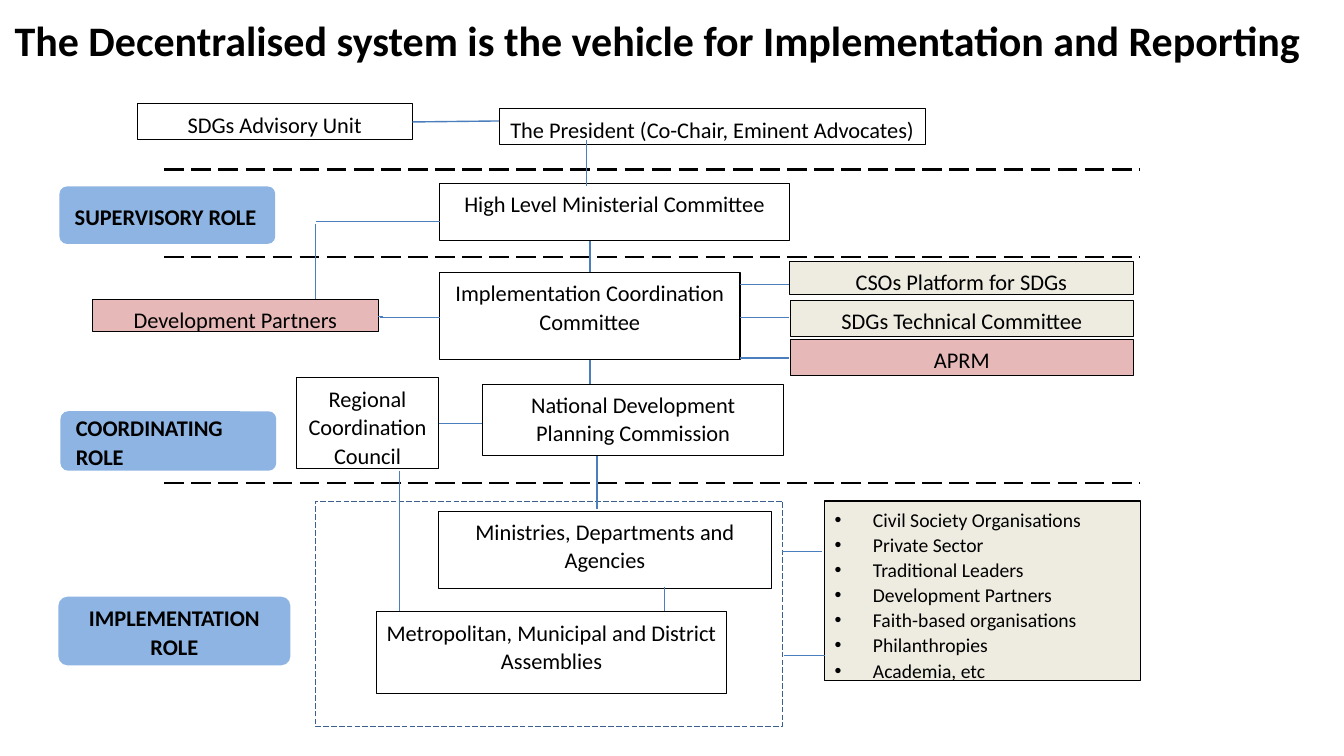
from lxml.etree import SubElement
from pptx import Presentation
from pptx.dml.color import RGBColor
from pptx.enum.dml import MSO_LINE
from pptx.enum.shapes import MSO_CONNECTOR, MSO_SHAPE
from pptx.enum.text import MSO_ANCHOR, PP_ALIGN
from pptx.oxml.ns import qn
from pptx.util import Inches, Pt

BLACK, WHITE, CREAM, PINK = "000000", "FFFFFF", "EEECE1", "E6B9B8"
ROLE_BLUE, LINK_BLUE, FRAME_BLUE = "8EB4E3", "4B7EBC", "3A5F8C"
CENTER, LEFT = PP_ALIGN.CENTER, PP_ALIGN.LEFT

prs = Presentation()
prs.slide_width, prs.slide_height = Inches(13.33), Inches(7.5)
slide = prs.slides.add_slide(prs.slide_layouts[6])


def add_box(text, at, *, kind=MSO_SHAPE.RECTANGLE, fill=None, line=None, width=0.75,
            dash=None, size=16, bold=False, align=CENTER, anchor=MSO_ANCHOR.TOP,
            spacing=1.07, bullets=False):
    """Add a shape whose text has one paragraph per line."""
    box = slide.shapes.add_shape(kind, *map(Inches, at))
    box.shadow.inherit = False
    if fill:
        box.fill.solid()
        box.fill.fore_color.rgb = RGBColor.from_string(fill)
    else:
        box.fill.background()
    if line:
        box.line.color.rgb = RGBColor.from_string(line)
        box.line.width = Pt(width)
        box.line.dash_style = dash
    else:
        box.line.fill.background()
    frame = box.text_frame
    frame.word_wrap = True
    frame.vertical_anchor = anchor
    frame.text = text
    for paragraph in frame.paragraphs:
        paragraph.alignment = align
        paragraph.line_spacing = spacing
        if bullets:
            props = paragraph._p.get_or_add_pPr()
            props.set("marL", str(Inches(0.38)))
            props.set("indent", str(-Inches(0.38)))
            SubElement(props, qn("a:buFont")).set("typeface", "Arial")
            SubElement(props, qn("a:buChar")).set("char", "•")
        font = paragraph.font
        font.name, font.size, font.bold = "Calibri", Pt(size), bold
        font.color.rgb = RGBColor.from_string(BLACK)
    return box


def add_line(x1, y1, x2, y2, color=LINK_BLUE, width=1, dash=None):
    line = slide.shapes.add_connector(MSO_CONNECTOR.STRAIGHT, *map(Inches, (x1, y1, x2, y2)))
    line.line.color.rgb = RGBColor.from_string(color)
    line.line.width = Pt(width)
    line.line.dash_style = dash
    SubElement(line._element.spPr, qn("a:effectLst"))


add_box("The Decentralised system is the vehicle for Implementation and Reporting",
        (0, 0.12, 13.05, 0.55), size=30, bold=True, anchor=MSO_ANCHOR.MIDDLE, spacing=1)

# Dividers between the levels
for y in (1.68, 2.55, 4.79):
    add_line(1.63, y, 11.31, y, BLACK, 1.75, MSO_LINE.LONG_DASH)

# Role labels
for role, at, align in (
    ("SUPERVISORY ROLE", (0.59, 1.85, 2.14, 0.57), LEFT),
    ("COORDINATING ROLE", (0.6, 4.08, 2.14, 0.59), LEFT),
    ("IMPLEMENTATION ROLE", (0.58, 5.92, 2.3, 0.68), CENTER),
):
    label = add_box(role, at, kind=MSO_SHAPE.ROUNDED_RECTANGLE, fill=ROLE_BLUE, bold=True,
                    align=align, anchor=MSO_ANCHOR.MIDDLE)
    label.adjustments[0] = 0.13
    label.text_frame.margin_left = label.text_frame.margin_right = Inches(0.13)

# Bodies
add_box("", (3.13, 4.97, 4.63, 2.24), line=FRAME_BLUE, width=0.5, dash=MSO_LINE.LONG_DASH)
for body, at, fill in (
    ("SDGs Advisory Unit", (1.36, 1.03, 2.73, 0.35), WHITE),
    ("The President (Co-Chair, Eminent Advocates)", (4.95, 1.08, 4.23, 0.35), WHITE),
    ("High Level Ministerial Committee", (4.36, 1.82, 3.47, 0.57), WHITE),
    ("Implementation Coordination Committee", (4.36, 2.7, 2.98, 0.87), WHITE),
    ("Development Partners", (0.92, 2.97, 2.83, 0.32), PINK),
    ("CSOs Platform for SDGs", (7.83, 2.59, 3.41, 0.33), CREAM),
    ("SDGs Technical Committee", (7.84, 2.98, 3.4, 0.36), CREAM),
    ("APRM", (7.84, 3.37, 3.4, 0.36), PINK),
    ("Regional Coordination Council", (2.94, 3.75, 1.41, 0.9), WHITE),
    ("National Development Planning Commission", (4.79, 3.81, 2.98, 0.71), WHITE),
    ("Ministries, Departments and Agencies", (4.35, 5.07, 3.3, 0.77), WHITE),
    ("Metropolitan, Municipal and District Assemblies", (3.73, 6.07, 3.48, 0.81), WHITE),
):
    add_box(body, at, fill=fill, line=BLACK)

partners = ("Civil Society Organisations", "Private Sector", "Traditional Leaders",
            "Development Partners", "Faith-based organisations", "Philanthropies",
            "Academia, etc")
add_box("\n".join(partners), (8.18, 4.97, 3.13, 1.78), fill=CREAM, line=BLACK, size=14,
        align=LEFT, bullets=True)

# Links between the bodies
for x, top, bottom in ((5.82, 1.39, 1.85), (5.85, 2.39, 2.7), (5.85, 3.57, 3.81),
                       (5.92, 4.52, 5.05), (3.13, 2.22, 2.97), (3.96, 4.67, 6.06),
                       (6.59, 5.82, 6.06)):
    add_line(x, top, x, bottom)
for y, left, right in ((2.2, 3.13, 4.36), (3.14, 3.75, 3.8), (3.15, 3.77, 4.36),
                       (2.82, 7.34, 7.83), (3.15, 7.34, 7.83), (3.55, 7.34, 7.83),
                       (4.2, 4.35, 4.78), (5.47, 7.76, 8.15), (6.5, 7.78, 8.18)):
    add_line(left, y, right, y)
add_line(4.09, 1.21, 4.95, 1.2)

prs.save("out.pptx")
